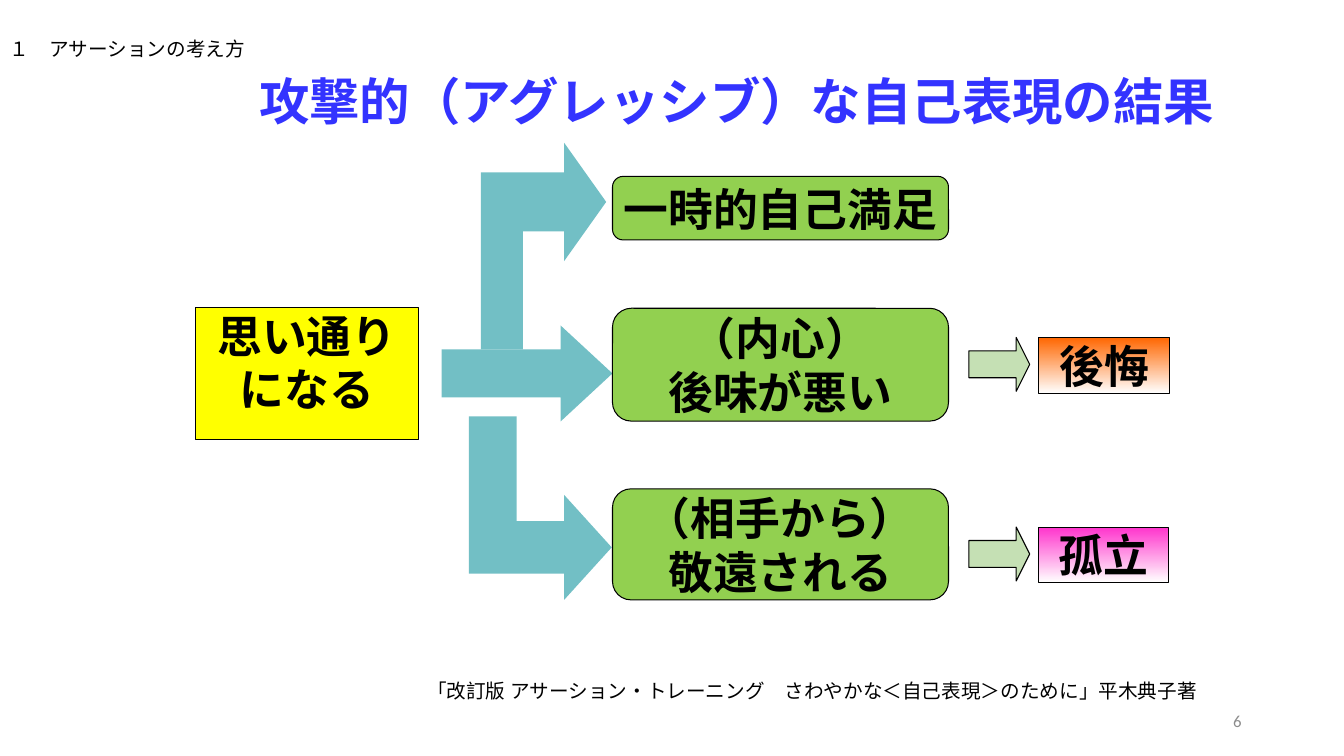
from lxml.etree import SubElement
from pptx import Presentation
from pptx.dml.color import RGBColor
from pptx.enum.shapes import MSO_SHAPE
from pptx.enum.text import MSO_ANCHOR, PP_ALIGN
from pptx.oxml.ns import qn
from pptx.util import Pt

BLACK = RGBColor(0, 0, 0)
WHITE = RGBColor(255, 255, 255)
BLUE = RGBColor(0x33, 0x33, 0xFF)
GRAY = RGBColor(0x8C, 0x8C, 0x8C)
TEAL = RGBColor(0x72, 0xBF, 0xC5)
GREEN = RGBColor(0x92, 0xD0, 0x50)
PALE = RGBColor(0xC5, 0xE0, 0xB4)
YELLOW = RGBColor(255, 255, 0)
ORANGE = RGBColor(0xFF, 0x66, 0)
PINK = RGBColor(0xFF, 0x33, 0xCC)
GOTHIC = "Noto Sans CJK JP"


def write(shape, text, size, color=BLACK, font=GOTHIC, bold=False,
          align=PP_ALIGN.LEFT, anchor=MSO_ANCHOR.MIDDLE, wrap=True):
    """Put formatted text into a shape."""
    frame = shape.text_frame
    frame.text = text
    frame.word_wrap = wrap
    frame.vertical_anchor = anchor
    for para in frame.paragraphs:
        para.alignment = align
        for run in para.runs:
            run.font.size = Pt(size)
            run.font.bold = bold
            run.font.name = font
            run.font.color.rgb = color
            east = SubElement(run.font._element, qn("a:ea"))
            east.set("typeface", GOTHIC)


def label(slide, box, text, size, **style):
    """Add a plain text box."""
    write(slide.shapes.add_textbox(*map(Pt, box)), text, size, **style)


def paint(shape, color, edge=True):
    """Give a shape a flat fill and an optional thin black edge."""
    shape.shadow.inherit = False
    shape.fill.solid()
    shape.fill.fore_color.rgb = color
    if edge:
        shape.line.color.rgb = BLACK
        shape.line.width = Pt(0.75)
    else:
        shape.line.fill.background()


def block(slide, kind, box, text, color, wrap=False):
    """Add an outlined block with large bold centred text."""
    shape = slide.shapes.add_shape(kind, *map(Pt, box))
    paint(shape, color)
    write(shape, text, 32, font="Arial", bold=True,
          align=PP_ALIGN.CENTER, wrap=wrap)
    return shape


def arrow(slide, box, color, head, edge=True):
    """Add a straight arrow pointing right."""
    shape = slide.shapes.add_shape(MSO_SHAPE.RIGHT_ARROW, *map(Pt, box))
    shape.adjustments[1] = head
    paint(shape, color, edge)


def bend(slide, box, stem, head, up):
    """Add a bent arrow that fills the box, its head at the top or bottom."""
    left, top, width, height = box
    right = left + width
    neck = right - stem
    half = head / 2
    tip = top + half if up else top + height - half
    tail = top + height if up else top
    turn = 1 if up else -1
    inner = tip + turn * half / 2
    outer = tip - turn * half / 2
    points = [(right, tip), (neck, tip + turn * half), (neck, inner),
              (left + stem, inner), (left + stem, tail), (left, tail),
              (left, outer), (neck, outer), (neck, tip - turn * half)]
    trace = [(Pt(x), Pt(y)) for x, y in points]
    build = slide.shapes.build_freeform(*trace[0], scale=1.0)
    build.add_line_segments(trace[1:], close=True)
    paint(build.convert_to_shape(), TEAL, edge=False)


def cause(slide, box):
    """Draw the yellow starting block."""
    shape = block(slide, MSO_SHAPE.RECTANGLE, box, "思い通り\nになる",
                  YELLOW, wrap=True)
    for para in shape.text_frame.paragraphs:
        para.line_spacing = Pt(22)
        para.space_before = Pt(16)


def fork(slide, box):
    """Draw the three teal arrows that lead to the effects."""
    left, top, width, height = box
    arrow(slide, (left, top + 130.5, width, 68.5), TEAL, 0.54, edge=False)
    bend(slide, (left + 28, top, 89.5, 147.5), 30, 84.5, True)
    bend(slide, (left + 19.5, top + 195.5, 102, height - 195.5),
         34, 75, False)


def effects(slide, box):
    """Draw the column of green effects."""
    left, top, width, height = box
    rows = [(0, 45.4, "一時的自己満足"),
            (94.2, 80.6, "（内心）\n後味が悪い"),
            (223.2, height - 223.2, "（相手から）\n敬遠される")]
    for down, tall, text in rows:
        block(slide, MSO_SHAPE.ROUNDED_RECTANGLE,
              (left, top + down, width, tall), text, GREEN)


def outcome(slide, box, text, color):
    """Draw a pale arrow and the shaded block it leads to."""
    left, top, width, height = box
    arrow(slide, (left, top, 43.5, 38.5), PALE, 0.25)
    shape = block(slide, MSO_SHAPE.RECTANGLE,
                  (left + 50, top, width - 50, height), text, color)
    shape.fill.gradient()
    shape.fill.gradient_angle = 270
    for stop, tint in zip(shape.fill.gradient_stops, (color, WHITE)):
        stop.color.rgb = tint


def main():
    """Build the slide and save it."""
    deck = Presentation()
    deck.slide_width, deck.slide_height = Pt(960), Pt(540)
    slide = deck.slides.add_slide(deck.slide_layouts[6])
    label(slide, (178, 40.5, 782, 62.5), "攻撃的（アグレッシブ）な自己表現の結果",
          36, color=BLUE, bold=True)
    fork(slide, (315.5, 102, 122, 326.5))
    effects(slide, (437.5, 126, 240, 302.5))
    outcome(slide, (692, 241, 143.5, 40), "後悔", ORANGE)
    outcome(slide, (692, 376.5, 142.5, 39.5), "孤立", PINK)
    cause(slide, (139.5, 220, 159.5, 94))
    label(slide, (0, 23, 362, 24.5), "１　アサーションの考え方", 14,
          anchor=MSO_ANCHOR.TOP)
    label(slide, (678, 500.5, 216, 29), "6", 12, color=GRAY,
          font="Calibri", align=PP_ALIGN.RIGHT)
    label(slide, (298, 481.5, 590, 24.5),
          "「改訂版 アサーション・トレーニング　さわやかな＜自己表現＞のために」平木典子著",
          14, anchor=MSO_ANCHOR.TOP)
    deck.save("out.pptx")


if __name__ == "__main__":
    main()
